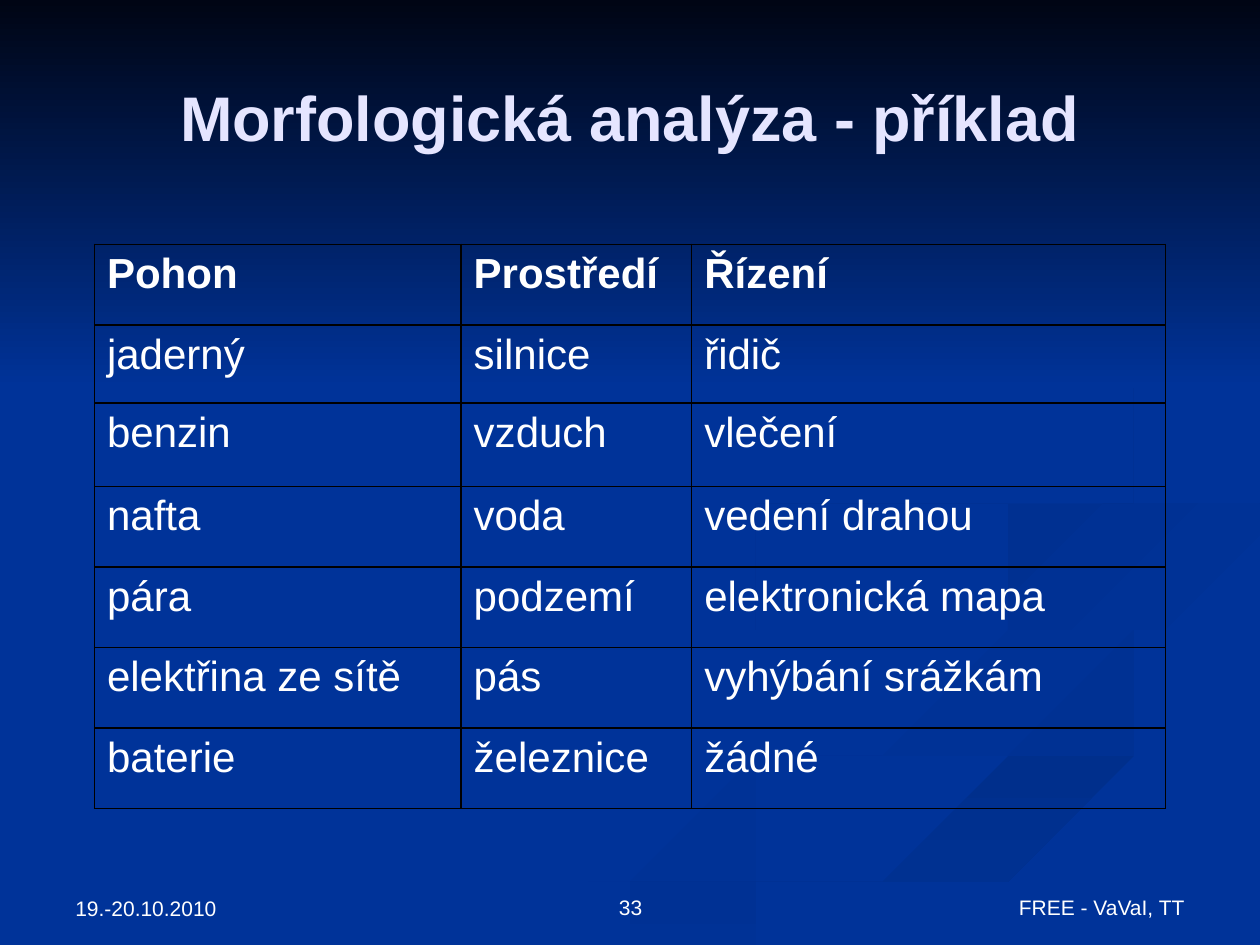
import pptx
import pptx.util
import pptx.dml.color
import pptx.enum.shapes
import pptx.enum.text
import pptx.oxml
import pptx.oxml.ns

Inches, Pt = pptx.util.Inches, pptx.util.Pt
RGBColor = pptx.dml.color.RGBColor
ALIGN = pptx.enum.text.PP_ALIGN
ANCHOR = pptx.enum.text.MSO_ANCHOR

BLUE = RGBColor(0x00, 0x33, 0x99)
NIGHT = RGBColor(0x00, 0x05, 0x14)
DEEP = RGBColor(0x00, 0x2F, 0x8C)
DIM = RGBColor(0x00, 0x30, 0x91)
FAINT = RGBColor(0x00, 0x31, 0x93)
WHITE = RGBColor(0xFF, 0xFF, 0xFF)
LAVENDER = RGBColor(0xE5, 0xE5, 0xFF)

METHODS = [
    ("Pohon", "Prostředí", "Řízení"),
    ("jaderný", "silnice", "řidič"),
    ("benzin", "vzduch", "vlečení"),
    ("nafta", "voda", "vedení drahou"),
    ("pára", "podzemí", "elektronická mapa"),
    ("elektřina ze sítě", "pás", "vyhýbání srážkám"),
    ("baterie", "železnice", "žádné"),
]
COLUMN_WIDTHS = [2.91, 1.83, 3.76]
ROW_HEIGHTS = [0.64, 0.62, 0.66] + [0.64] * 4
TABLE_LEFT, TABLE_TOP = 0.75, 1.94
HANGING = 0.38

FOOTER_FONT = {"name": "Arial", "size": Pt(12)}
CELL_FONT = {"name": "Arial", "size": Pt(24)}
TITLE_FONT = {"name": "Arial", "size": Pt(36), "bold": True}
CAPTIONS = [
    ("FREE - VaVaI, TT", (7.17, 6.83, 2.33, 0.52), ALIGN.RIGHT, ANCHOR.BOTTOM, FOOTER_FONT, WHITE),
    ("33", (3.42, 6.83, 3.17, 0.52), ALIGN.CENTER, ANCHOR.BOTTOM, FOOTER_FONT, WHITE),
    ("Morfologická analýza - příklad", (0.5, 0.3, 9, 1.25), ALIGN.CENTER, ANCHOR.MIDDLE,
     TITLE_FONT, LAVENDER),
    ("19.-20.10.2010", (0.5, 6.84, 2.33, 0.52), ALIGN.LEFT, ANCHOR.BOTTOM, FOOTER_FONT, WHITE),
]

RIBBONS = [
    ((BLUE, FAINT, 0), [
        (7.81, 5.53), (6.42, 5.07), (5.75, 4.6), (6.02, 4.95), (7.41, 5.39), (7.83, 5.74),
        (6.16, 6.29), (3, 7.49), (3.61, 7.49), (5.64, 6.65), (7.56, 6.14), (8, 5.81)]),
    ((BLUE, FAINT, 45), [
        (9.43, 5.7), (8.88, 5.35), (7.58, 4.98), (7.24, 4.64), (7.55, 5.05), (8.8, 5.49),
        (9.17, 5.85), (8.94, 6.05), (9.32, 5.89)]),
    ((DEEP, BLUE, 90), [
        (5.03, 7.49), (5.71, 7.49), (7.22, 6.82), (9.98, 6.09), (9.98, 5.81), (7.97, 6.38),
        (6.3, 6.93)]),
    ((BLUE, BLUE, 0), [
        (7.25, 4.64), (7.93, 5.09), (9.2, 5.47), (9.26, 5.93), (7.04, 6.55), (4.77, 7.49),
        (5.19, 7.47), (6.96, 6.69), (9.99, 5.81), (9.99, 5.38), (8.32, 4.98), (7.82, 4.6),
        (8.5, 4.27), (9.99, 4.02), (9.99, 3.87), (8.08, 4.17)]),
    ((DIM, BLUE, 45), [
        (7.81, 4.6), (8.26, 4.96), (8.05, 4.72), (8.59, 4.43), (9.98, 4.2), (9.98, 4.02),
        (8.35, 4.3)]),
    ((DEEP, BLUE, 45), [
        (6.83, 4.3), (8.25, 4.02), (8.92, 3.54), (8.64, 2.91), (7.62, 2.33), (8.62, 2.92),
        (8.82, 3.54), (7.63, 3.98), (6.05, 4.33), (5.8, 4.74), (6.22, 5), (5.94, 4.65)]),
]
CURVE_STEPS = 6


def smooth(knots):
    curve = []
    for index, knot in enumerate(knots):
        before, after, beyond = (knots[(index + shift) % len(knots)] for shift in (-1, 1, 2))
        for step in range(CURVE_STEPS):
            t = step / CURVE_STEPS
            x, y = (
                b + t * (c - a + t * (2 * a - 5 * b + 4 * c - d + t * (3 * (b - c) + d - a))) / 2
                for a, b, c, d in zip(before, knot, after, beyond))
            curve.append((min(x, 10), min(y, 7.5)))
    return curve


def paint(shape, start, end, angle):
    shape.shadow.inherit = False
    shape.line.fill.background()
    if start == end:
        shape.fill.solid()
        shape.fill.fore_color.rgb = start
        return
    shape.fill.gradient()
    shape.fill.gradient_angle = (360 - angle) % 360
    for stop, color in zip(shape.fill.gradient_stops, (start, end)):
        stop.color.rgb = color


def write(paragraph, text, font_format, color):
    run = paragraph.add_run()
    run.text = text
    for attribute, value in font_format.items():
        setattr(run.font, attribute, value)
    run.font.color.rgb = color


def add_caption(slide, text, place, alignment, anchor, font_format, color):
    frame = slide.shapes.add_textbox(*map(Inches, place)).text_frame
    for attribute, value in {"word_wrap": True, "vertical_anchor": anchor}.items():
        setattr(frame, attribute, value)
    frame.paragraphs[0].alignment = alignment
    write(frame.paragraphs[0], text, font_format, color)


def add_borders(cell):
    properties = cell._tc.get_or_add_tcPr()
    for position, side in enumerate(("lnL", "lnR", "lnT", "lnB")):
        properties.insert(position, pptx.oxml.parse_xml(
            f'<a:{side} {pptx.oxml.ns.nsdecls("a")} w="{Pt(1)}"><a:solidFill>'
            f'<a:srgbClr val="000000"/></a:solidFill></a:{side}>'))


def add_methods(slide):
    methods = slide.shapes.add_table(
        len(METHODS), len(COLUMN_WIDTHS), Inches(TABLE_LEFT), Inches(TABLE_TOP),
        Inches(sum(COLUMN_WIDTHS)), Inches(sum(ROW_HEIGHTS))).table
    methods.horz_banding = False
    methods.first_row = False
    for column, width in zip(methods.columns, COLUMN_WIDTHS):
        column.width = Inches(width)
    for row, height, (index, words) in zip(methods.rows, ROW_HEIGHTS, enumerate(METHODS)):
        row.height = Inches(height)
        for cell, word in zip(row.cells, words):
            cell.fill.background()
            add_borders(cell)
            paragraph = cell.text_frame.paragraphs[0]
            indents = paragraph._p.get_or_add_pPr()
            indents.set("marL", str(Inches(HANGING)))
            indents.set("indent", str(-Inches(HANGING)))
            write(paragraph, word, {**CELL_FONT, "bold": index == 0}, WHITE)


def main():
    deck = pptx.Presentation()
    deck.slide_width, deck.slide_height = Inches(10), Inches(7.5)
    slide = deck.slides.add_slide(deck.slide_layouts[6])
    slide.background.fill.solid()
    slide.background.fill.fore_color.rgb = BLUE

    for shades, knots in RIBBONS:
        outline = smooth(knots)
        builder = slide.shapes.build_freeform(*outline[0], scale=Inches(1))
        builder.add_line_segments(outline[1:], close=True)
        paint(builder.convert_to_shape(), *shades)
    sky = slide.shapes.add_shape(
        pptx.enum.shapes.MSO_SHAPE.RECTANGLE, 0, 0, deck.slide_width, Inches(3.08))
    paint(sky, NIGHT, BLUE, 90)

    add_methods(slide)
    for caption in CAPTIONS:
        add_caption(slide, *caption)
    deck.save("out.pptx")


if __name__ == "__main__":
    main()
